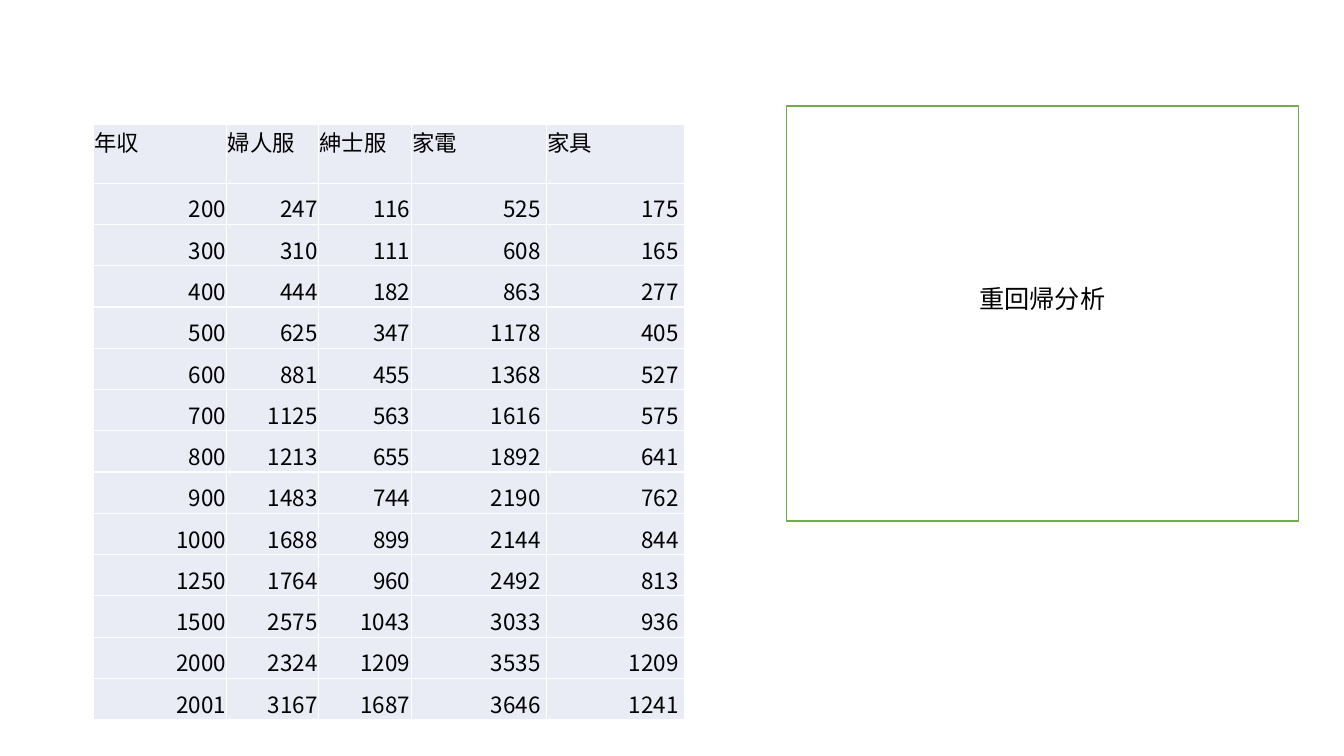
import dataclasses

import pptx
import pptx.dml.color
import pptx.enum.shapes
import pptx.enum.text
import pptx.oxml.ns
import pptx.util
from lxml import etree

Pt = pptx.util.Pt
PP_ALIGN = pptx.enum.text.PP_ALIGN
MSO_ANCHOR = pptx.enum.text.MSO_ANCHOR

HEADINGS = ("年収", "婦人服", "紳士服", "家電", "家具")
SPENDING_BY_INCOME = (
    (200, 247, 116, 525, 175),
    (300, 310, 111, 608, 165),
    (400, 444, 182, 863, 277),
    (500, 625, 347, 1178, 405),
    (600, 881, 455, 1368, 527),
    (700, 1125, 563, 1616, 575),
    (800, 1213, 655, 1892, 641),
    (900, 1483, 744, 2190, 762),
    (1000, 1688, 899, 2144, 844),
    (1250, 1764, 960, 2492, 813),
    (1500, 2575, 1043, 3033, 936),
    (2000, 2324, 1209, 3535, 1209),
    (2001, 3167, 1687, 3646, 1241),
)
COLUMN_WIDTHS = (95.5, 65.5, 66.2, 96.7, 98.6)
RIGHT_MARGINS = (0.7, 0.7, 0.7, 4.3, 4.3)
HEADING_HEIGHT = 42
ROW_HEIGHT = 29.5


@dataclasses.dataclass(frozen=True)
class Theme:
    font: str = "Noto Sans CJK JP"
    text: str = "000000"
    paper: str = "FFFFFF"
    cell: str = "E9EBF5"
    outline: str = "70AD47"
    table_size: int = 16
    panel_size: int = 18
    line_width: int = 1


def rgb(color):
    return pptx.dml.color.RGBColor.from_string(color)


class SlideBuilder:
    def __init__(self, slide, theme):
        self.slide = slide
        self.theme = theme

    def set_text(self, text_frame, text, size, alignment):
        text_frame.text = text
        paragraph = text_frame.paragraphs[0]
        paragraph.alignment = alignment
        paragraph.font.size = Pt(size)
        paragraph.font.name = self.theme.font
        paragraph.font.color.rgb = rgb(self.theme.text)
        properties = paragraph._p.pPr.find(pptx.oxml.ns.qn("a:defRPr"))
        east_asian = etree.SubElement(properties, pptx.oxml.ns.qn("a:ea"))
        east_asian.set("typeface", self.theme.font)

    def border(self, cell):
        """Give all four sides of the cell a solid line, placed before its fill."""
        properties = cell._tc.get_or_add_tcPr()
        for position, side in enumerate(("lnL", "lnR", "lnT", "lnB")):
            line = etree.Element(pptx.oxml.ns.qn(f"a:{side}"), w=str(Pt(self.theme.line_width)))
            fill = etree.SubElement(line, pptx.oxml.ns.qn("a:solidFill"))
            etree.SubElement(fill, pptx.oxml.ns.qn("a:srgbClr"), val=self.theme.paper)
            properties.insert(position, line)

    def table(self, left, top, headings, records):
        height = HEADING_HEIGHT + ROW_HEIGHT * len(records)
        table = self.slide.shapes.add_table(
            len(records) + 1, len(headings),
            Pt(left), Pt(top), Pt(sum(COLUMN_WIDTHS)), Pt(height)).table
        table.first_row = False
        table.horz_banding = False
        for column, width in zip(table.columns, COLUMN_WIDTHS):
            column.width = Pt(width)
        for row_index, values in enumerate((headings, *records)):
            is_heading = row_index == 0
            table.rows[row_index].height = Pt(HEADING_HEIGHT if is_heading else ROW_HEIGHT)
            for column_index, value in enumerate(values):
                cell = table.cell(row_index, column_index)
                cell.margin_left = cell.margin_top = Pt(0.7)
                cell.margin_right = Pt(RIGHT_MARGINS[column_index])
                cell.margin_bottom = 0
                cell.vertical_anchor = MSO_ANCHOR.TOP if is_heading else MSO_ANCHOR.BOTTOM
                cell.fill.solid()
                cell.fill.fore_color.rgb = rgb(self.theme.cell)
                self.border(cell)
                self.set_text(cell.text_frame, str(value), self.theme.table_size,
                              PP_ALIGN.LEFT if is_heading else PP_ALIGN.RIGHT)

    def panel(self, left, top, width, height, text):
        shape = self.slide.shapes.add_shape(
            pptx.enum.shapes.MSO_SHAPE.RECTANGLE, Pt(left), Pt(top), Pt(width), Pt(height))
        shape.shadow.inherit = False
        shape.fill.solid()
        shape.fill.fore_color.rgb = rgb(self.theme.paper)
        shape.line.color.rgb = rgb(self.theme.outline)
        shape.line.width = Pt(self.theme.line_width)
        text_frame = shape.text_frame
        text_frame.word_wrap = True
        text_frame.vertical_anchor = MSO_ANCHOR.MIDDLE
        text_frame.margin_bottom = Pt(25.6)
        self.set_text(text_frame, text, self.theme.panel_size, PP_ALIGN.CENTER)


def main():
    presentation = pptx.Presentation()
    presentation.slide_width = Pt(960)
    presentation.slide_height = Pt(540)
    slide = presentation.slides.add_slide(presentation.slide_layouts[6])
    builder = SlideBuilder(slide, Theme())
    builder.table(66.5, 88.8, HEADINGS, SPENDING_BY_INCOME)
    builder.panel(561.6, 75.6, 365.8, 296.6, "重回帰分析")
    presentation.save("out.pptx")


if __name__ == "__main__":
    main()
